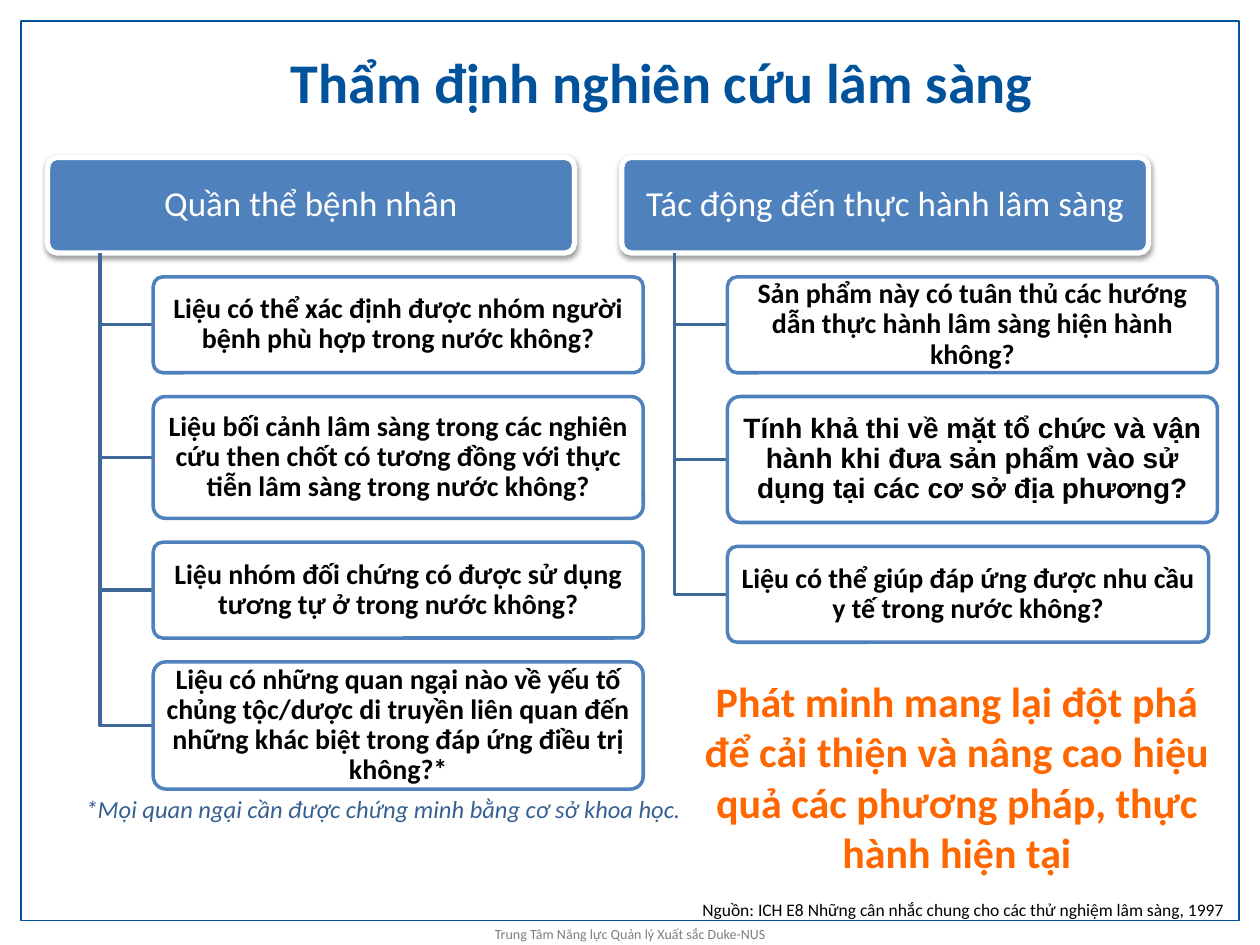
from lxml import etree
from pptx import Presentation
from pptx.dml.color import RGBColor
from pptx.enum.shapes import MSO_SHAPE as Shape
from pptx.enum.text import MSO_ANCHOR as Anchor, PP_ALIGN as Align
from pptx.oxml import parse_xml
from pptx.oxml.ns import nsdecls, qn
from pptx.util import Pt


def color(value):
    return RGBColor.from_string(value)


def write(box, text, size, ink, bold=False, italic=False, font="Calibri",
          align=Align.CENTER, anchor=Anchor.TOP, inset=(0, 0), spacing=None):
    frame = box.text_frame
    frame.word_wrap = True
    frame.vertical_anchor = anchor
    frame.margin_left = frame.margin_right = Pt(inset[0])
    frame.margin_top = frame.margin_bottom = Pt(inset[1])
    para = frame.paragraphs[0]
    para.alignment = align
    para.line_spacing = spacing
    span = para.add_run()
    span.text = text
    span.font.name = font
    span.font.size = Pt(size)
    span.font.bold = bold
    span.font.italic = italic
    span.font.color.rgb = color(ink)


deck = Presentation()
deck.slide_width, deck.slide_height = Pt(720), Pt(540)
page = deck.slides.add_slide(deck.slide_layouts[6])

border = page.shapes.add_shape(Shape.RECTANGLE, Pt(12), Pt(12), Pt(696), Pt(514))
border.shadow.inherit = False
border.fill.background()
border.line.color.rgb = color("00529B")
border.line.width = Pt(0.75)

source = page.shapes.add_textbox(Pt(401.4), Pt(513.7), Pt(313), Pt(13))
write(source, "Nguồn: ICH E8 Những cân nhắc chung cho các thử nghiệm lâm sàng, 1997",
      10, "000000", align=Align.LEFT)

columns = [
    (27.2, "Quần thể bệnh nhân", [
        ("Liệu có thể xác định được nhóm người bệnh phù hợp trong nước không?", 280, 54.8, "Calibri"),
        ("Liệu bối cảnh lâm sàng trong các nghiên cứu then chốt có tương đồng với thực "
         "tiễn lâm sàng trong nước không?", 280, 69.6, "Calibri"),
        ("Liệu nhóm đối chứng có được sử dụng tương tự ở trong nước không?", 280, 54.8, "Calibri"),
        ("Liệu có những quan ngại nào về yếu tố chủng tộc/dược di truyền liên quan đến "
         "những khác biệt trong đáp ứng điều trị không?*", 280, 72.7, "Calibri"),
    ]),
    (355.3, "Tác động đến thực hành lâm sàng", [
        ("Sản phẩm này có tuân thủ các hướng dẫn thực hành lâm sàng hiện hành không?", 280, 54.8, "Calibri"),
        ("Tính khả thi về mặt tổ chức và vận hành khi đưa sản phẩm vào sử dụng tại các "
         "cơ sở địa phương?", 280, 72, "Arial"),
        ("Liệu có thể giúp đáp ứng được nhu cầu y tế trong nước không?", 275, 54.8, "Calibri"),
    ]),
]
head_top, head_height, gap = 90, 54.6, 13.6
head_bottom = head_top + head_height

for left, heading, questions in columns:
    head = page.shapes.add_shape(Shape.ROUNDED_RECTANGLE, Pt(left), Pt(head_top), Pt(301), Pt(head_height))
    head.adjustments[0] = 0.1
    head.shadow.inherit = False
    head.fill.solid()
    head.fill.fore_color.rgb = color("4F81BD")
    head.line.color.rgb = color("FFFFFF")
    head.line.width = Pt(3)
    head._element.spPr.find(qn("a:effectLst")).append(parse_xml(
        f'<a:outerShdw {nsdecls("a")} blurRad="40000" dist="20000" dir="5400000" rotWithShape="0">'
        '<a:srgbClr val="000000"><a:alpha val="38000"/></a:srgbClr></a:outerShdw>'))
    write(head, heading, 20, "FFFFFF", anchor=Anchor.MIDDLE, inset=(2.9, 2.2), spacing=0.9)

    trunk, card_left = left + 30.1, left + 60.4
    top = head_bottom + gap
    for question, width, height, font in questions:
        middle = top + height / 2
        builder = page.shapes.build_freeform(Pt(trunk), Pt(head_bottom))
        builder.add_line_segments(
            [(Pt(trunk), Pt(middle)), (Pt(card_left), Pt(middle))], close=False)
        branch = builder.convert_to_shape()
        branch.shadow.inherit = False
        branch.fill.background()
        branch.line.color.rgb = color("3F6797")
        branch.line.width = Pt(2)

        card = page.shapes.add_shape(Shape.ROUNDED_RECTANGLE, Pt(card_left), Pt(top), Pt(width), Pt(height))
        card.adjustments[0] = 0.1
        card.shadow.inherit = False
        card.fill.solid()
        card.fill.fore_color.rgb = color("FFFFFF")
        tint = card._element.spPr.find(qn("a:solidFill")).find(qn("a:srgbClr"))
        etree.SubElement(tint, qn("a:alpha")).set("val", "90000")
        card.line.color.rgb = color("4F81BD")
        card.line.width = Pt(2)
        write(card, question, 16, "000000", bold=True, font=font,
              anchor=Anchor.MIDDLE, inset=(2.2, 1.4), spacing=0.9)
        top += height + gap

message = page.shapes.add_textbox(Pt(390.2), Pt(382.3), Pt(313.2), Pt(124))
write(message, "Phát minh mang lại đột phá để cải thiện và nâng cao hiệu quả các phương pháp, "
      "thực hành hiện tại", 24, "FF6600", bold=True, inset=(7.2, 3.6))

footnote = page.shapes.add_textbox(Pt(41.8), Pt(450), Pt(360), Pt(24.5))
write(footnote, "*Mọi quan ngại cần được chứng minh bằng cơ sở khoa học.",
      14, "376092", italic=True, align=Align.LEFT, inset=(7.2, 3.6))

title = page.shapes.add_textbox(Pt(129.6), Pt(27), Pt(497.5), Pt(39.6))
write(title, "Thẩm định nghiên cứu lâm sàng", 32, "00529B", bold=True)

footer = page.shapes.add_textbox(Pt(246.2), Pt(529.9), Pt(228.2), Pt(9.4))
write(footer, "Trung Tâm Năng lực Quản lý Xuất sắc Duke-NUS", 8, "7E7E7E", spacing=Pt(8.7))

deck.save("out.pptx")
